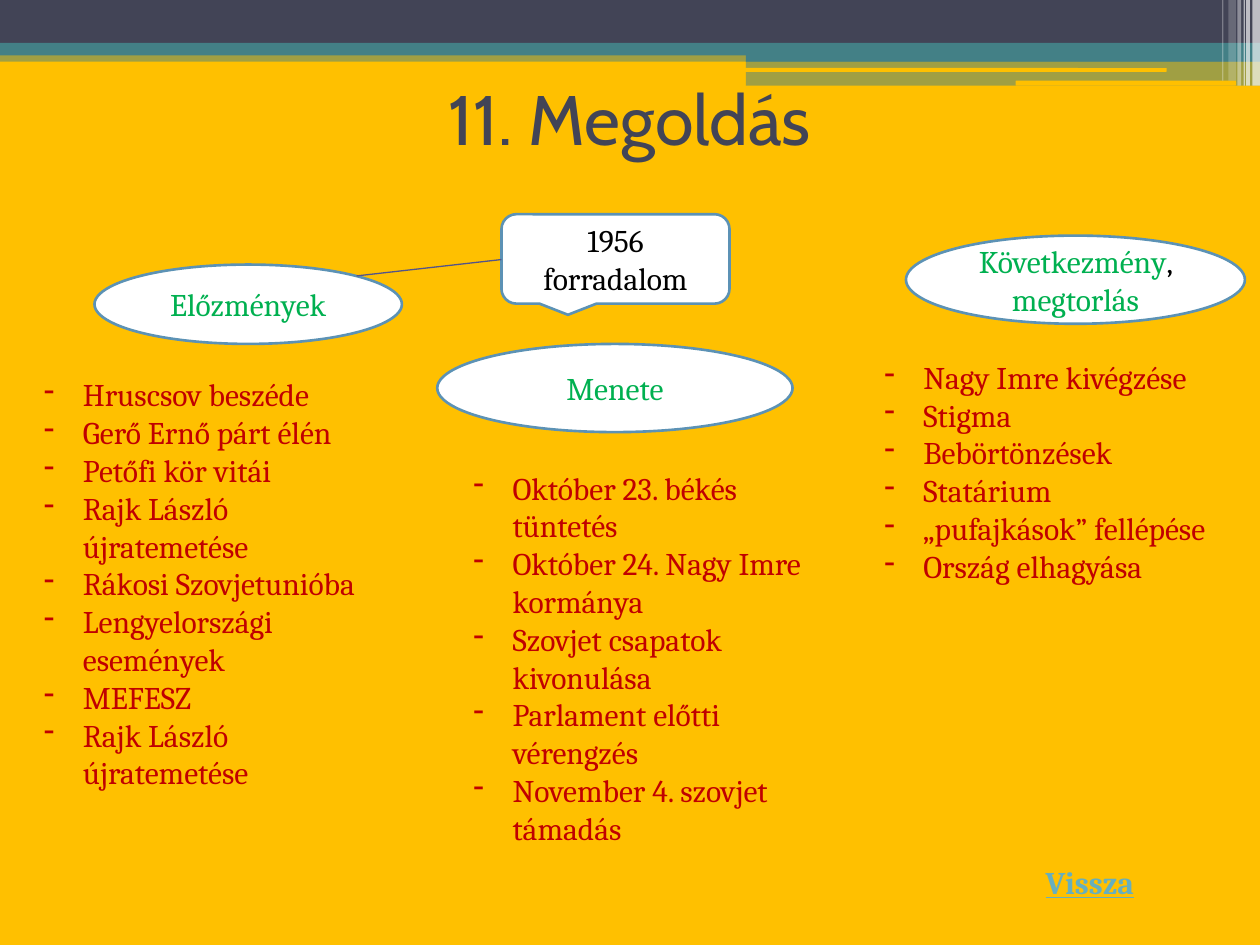
from pptx import Presentation
from pptx.util import Inches, Pt
from pptx.dml.color import RGBColor
from pptx.enum.shapes import MSO_SHAPE as Geo, MSO_CONNECTOR as Conn
from pptx.enum.text import PP_ALIGN as Align, MSO_ANCHOR as Anchor, MSO_AUTO_SIZE as Auto
from pptx.oxml.ns import qn
from lxml.etree import SubElement, fromstring

GOLD = RGBColor(0xFF, 0xC0, 0x00)
NAVY = RGBColor(0x42, 0x44, 0x56)
TEAL = RGBColor(0x43, 0x80, 0x86)
WHITE = RGBColor(0xFF, 0xFF, 0xFF)
BLACK = RGBColor(0x00, 0x00, 0x00)
BLUE = RGBColor(0x5C, 0x92, 0xB5)
VIOLET = RGBColor(0x53, 0x54, 0x8A)
GREEN = RGBColor(0x00, 0xB0, 0x50)
RED = RGBColor(0xC0, 0x00, 0x00)
SKY = RGBColor(0x67, 0xAF, 0xBD)

prs = Presentation()
prs.slide_width, prs.slide_height = Inches(10), Inches(7.5)
slide = prs.slides.add_slide(prs.slide_layouts[5])
slide.background.fill.solid()
slide.background.fill.fore_color.rgb = GOLD
shapes = slide.shapes


def add_run(para, text, color, size=18, font="Cambria"):
    run = para.add_run()
    run.text = text
    run.font.size = Pt(size)
    run.font.name = font
    run.font.color.rgb = color
    return run


def add_form(geo, box, color):
    form = shapes.add_shape(geo, *map(Inches, box))
    form.shadow.inherit = False
    form.fill.solid()
    form.fill.fore_color.rgb = color
    form.line.fill.background()
    return form


bands = [
    (Geo.RECTANGLE, (0, 0.4, 10, 0.09), TEAL, 50),
    (Geo.RECTANGLE, (0, 0, 10, 0.34), NAVY, 100),
    (Geo.RECTANGLE, (0, 0.34, 10, 0.1), TEAL, 100),
    (Geo.RECTANGLE, (5.92, 0.39, 4.08, 0.1), TEAL, 100),
    (Geo.RECTANGLE, (5.92, 0.48, 4.08, 0.2), TEAL, 50),
    (Geo.ROUNDED_RECTANGLE, (5.91, 0.54, 3.35, 0.03), GOLD, 100),
    (Geo.ROUNDED_RECTANGLE, (8.06, 0.64, 1.75, 0.04), GOLD, 100),
]
stripes = [
    (9.94, 0.06, 0.68, 65), (9.89, 0.03, 0.68, 65), (9.87, 0.01, 0.68, 60),
    (9.82, 0.03, 0.68, 40), (9.75, 0.06, 0.64, 20), (9.7, 0.01, 0.64, 30),
]
for left, width, height, alpha in stripes:
    bands.append((Geo.RECTANGLE, (left, 0, width, height), WHITE, alpha))
for geo, box, color, alpha in bands:
    band = add_form(geo, box, color)
    if alpha < 100:
        tint = band.fill._xPr.find(qn("a:solidFill"))[0]
        SubElement(tint, qn("a:alpha")).set("val", str(alpha * 1000))

title = shapes.title
title.left, title.top = Inches(0.5), Inches(0.35)
title.width, title.height = Inches(9), Inches(1.17)
title.text_frame.vertical_anchor = Anchor.MIDDLE
para = title.text_frame.paragraphs[0]
para.alignment = Align.CENTER
add_run(para, "11. Megoldás", NAVY, 40, "Cabin")

back = shapes.add_textbox(Inches(8.2), Inches(6.8), Inches(1.03), Inches(0.4))
back.text_frame.word_wrap = False
back.text_frame.auto_size = Auto.SHAPE_TO_FIT_TEXT
run = add_run(back.text_frame.paragraphs[0], "Vissza", SKY)
run.font.bold = run.font.underline = True
edge = fromstring(
    '<a:ln xmlns:a="http://schemas.openxmlformats.org/drawingml/2006/main" w="17780">'
    f'<a:solidFill><a:srgbClr val="{WHITE}"/></a:solidFill></a:ln>')
run.font._element.insert(0, edge)

nodes = [
    (Geo.ROUNDED_RECTANGULAR_CALLOUT, (3.98, 1.7, 1.81, 0.71), [("1956 forradalom", BLACK)]),
    (Geo.OVAL, (0.75, 2.1, 2.44, 0.63), [("Előzmények", GREEN)]),
    (Geo.OVAL, (3.47, 2.73, 2.82, 0.7), [("Menete", GREEN)]),
    (Geo.OVAL, (7.19, 1.87, 2.69, 0.7),
     [("Következmény", GREEN), (", ", BLACK), ("megtorlás", GREEN)]),
]
for geo, box, parts in nodes:
    node = add_form(geo, box, WHITE)
    node.line.color.rgb = BLUE
    node.line.width = Pt(1.5)
    node.text_frame.word_wrap = True
    node.text_frame.vertical_anchor = Anchor.MIDDLE
    para = node.text_frame.paragraphs[0]
    para.alignment = Align.CENTER
    for text, color in parts:
        add_run(para, text, color)

link = shapes.add_connector(
    Conn.STRAIGHT, Inches(2.83), Inches(2.19), Inches(3.98), Inches(2.06))
link.line.color.rgb = VIOLET
link.line.width = Pt(0.75)
SubElement(link._element.spPr, qn("a:effectLst"))

lists = [
    ((6.92, 2.79, 3.28, 1.92), [
        "Nagy Imre kivégzése", "Stigma", "Bebörtönzések", "Statárium",
        "„pufajkások” fellépése", "Ország elhagyása"]),
    ((0.25, 2.93, 2.94, 3.43), [
        "Hruscsov beszéde", "Gerő Ernő párt élén", "Petőfi kör vitái",
        "Rajk László újratemetése", "Rákosi Szovjetunióba",
        "Lengyelországi események", "MEFESZ", "Rajk László újratemetése"]),
    ((3.66, 3.67, 2.83, 3.13), [
        "Október 23. békés tüntetés", "Október 24. Nagy Imre kormánya",
        "Szovjet csapatok kivonulása", "Parlament előtti vérengzés",
        "November 4. szovjet támadás"]),
]
for box, items in lists:
    frame = shapes.add_textbox(*map(Inches, box)).text_frame
    frame.word_wrap = True
    frame.auto_size = Auto.SHAPE_TO_FIT_TEXT
    for i, item in enumerate(items):
        para = frame.add_paragraph() if i else frame.paragraphs[0]
        props = para._p.get_or_add_pPr()
        props.set("marL", str(Inches(0.31)))
        props.set("indent", str(-Inches(0.31)))
        SubElement(props, qn("a:buChar")).set("char", "-")
        add_run(para, item, RED)

prs.save("out.pptx")
